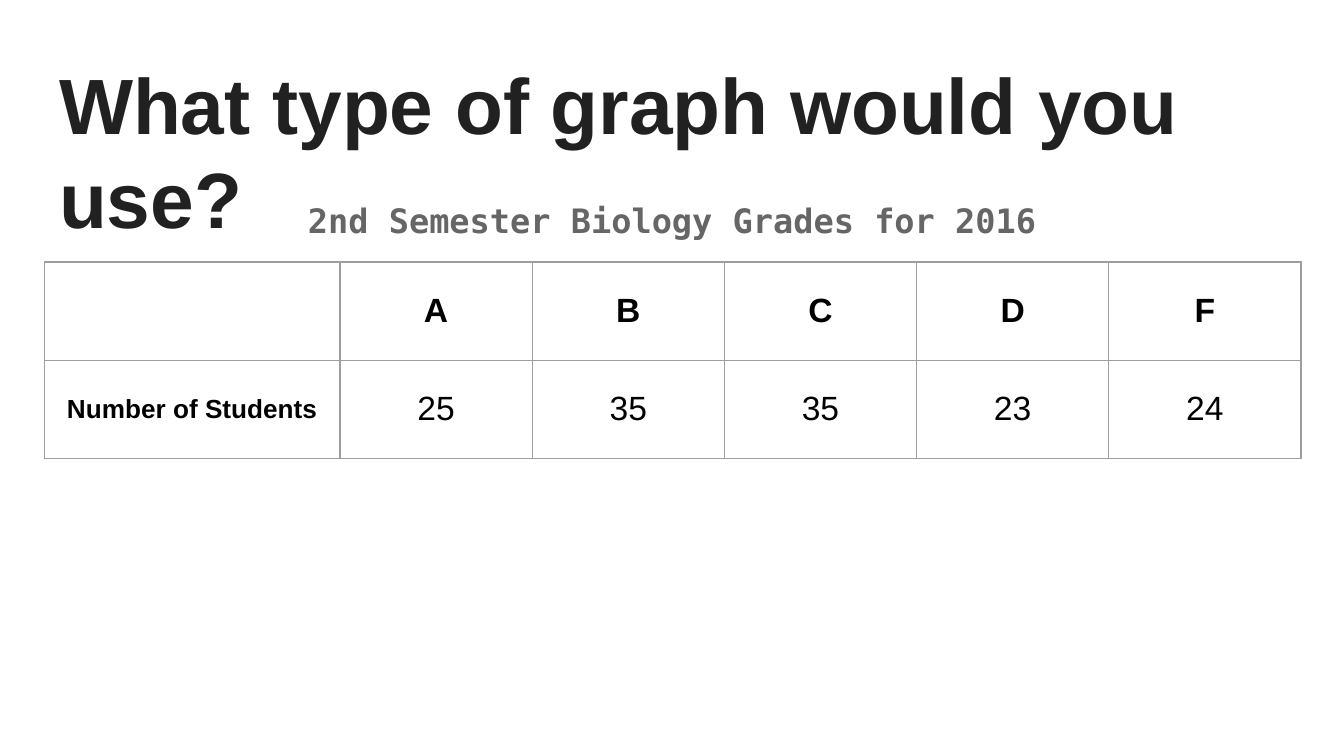
from lxml import etree
from pptx import Presentation
from pptx.dml.color import RGBColor
from pptx.enum.text import MSO_ANCHOR, PP_ALIGN
from pptx.oxml.ns import qn
from pptx.util import Inches, Pt

TOP, MIDDLE = MSO_ANCHOR.TOP, MSO_ANCHOR.MIDDLE
LEFT, CENTER = PP_ALIGN.LEFT, PP_ALIGN.CENTER
INK = RGBColor(0x21, 0x21, 0x21)
GRAY = RGBColor(0x66, 0x66, 0x66)
BLACK = RGBColor(0, 0, 0)
EDGE = RGBColor(0x9E, 0x9E, 0x9E)

TITLE = "What type of graph would you use?"
NOTE = "2nd Semester Biology Grades for 2016"
ROWS = [
    ["", "A", "B", "C", "D", "F"],
    ["Number of Students", "25", "35", "35", "23", "24"],
]
WIDTHS = [2.2] + [1.43] * 5
HEIGHT = 0.73
PAD = Inches(0.1)
SIDES = ["left", "top", "right", "bottom"]


def write(frame, text, font, para):
    line = frame.paragraphs[0]
    run = line.add_run()
    run.text = text
    for key, value in para.items():
        setattr(line, key, value)
    color = font["color"]
    for key, value in font.items():
        if key != "color":
            setattr(run.font, key, value)
    run.font.color.rgb = color


def fit(frame):
    frame.word_wrap = True
    frame.vertical_anchor = TOP
    for side in SIDES:
        setattr(frame, "margin_" + side, PAD)


def edge(cell):
    props = cell._tc.get_or_add_tcPr()
    for spot, tag in enumerate(["a:lnL", "a:lnR", "a:lnT", "a:lnB"]):
        line = etree.Element(qn(tag), w=str(Pt(0.75)))
        fill = etree.SubElement(line, qn("a:solidFill"))
        etree.SubElement(fill, qn("a:srgbClr"), val=str(EDGE))
        props.insert(spot, line)


def main():
    deck = Presentation()
    deck.slide_width = Inches(10)
    deck.slide_height = Inches(10 * 9 / 16)
    slide = deck.slides.add_slide(deck.slide_layouts[5])

    title = slide.shapes.title
    place = dict(left=0.34, top=0.32, width=9.32, height=0.88)
    for key, value in place.items():
        setattr(title, key, Inches(value))
    fit(title.text_frame)
    write(title.text_frame, TITLE,
          dict(size=Pt(42), name="Arial", bold=True, color=INK),
          dict(alignment=LEFT, line_spacing=1.0))

    note = slide.shapes.add_textbox(
        Inches(0.34), Inches(1.34), Inches(9.32), Inches(3.65))
    fit(note.text_frame)
    write(note.text_frame, NOTE,
          dict(size=Pt(18), name="DejaVu Sans Mono", bold=True, color=GRAY),
          dict(alignment=CENTER, line_spacing=1.15, space_after=Pt(16)))

    table = slide.shapes.add_table(
        len(ROWS), len(WIDTHS), Inches(0.33), Inches(1.95),
        Inches(sum(WIDTHS)), Inches(HEIGHT * len(ROWS))).table
    table.horz_banding = False
    for column, width in zip(table.columns, WIDTHS):
        column.width = Inches(width)
    for r, row in enumerate(ROWS):
        table.rows[r].height = Inches(HEIGHT)
        for c, text in enumerate(row):
            cell = table.cell(r, c)
            cell.fill.background()
            edge(cell)
            cell.vertical_anchor = MIDDLE
            for side in SIDES:
                setattr(cell, "margin_" + side, PAD)
            if text:
                size = 14 if c == 0 else 18
                write(cell.text_frame, text,
                      dict(size=Pt(size), name="Arial",
                           bold=r == 0 or c == 0, color=BLACK),
                      dict(alignment=CENTER))

    deck.save("out.pptx")


if __name__ == "__main__":
    main()
